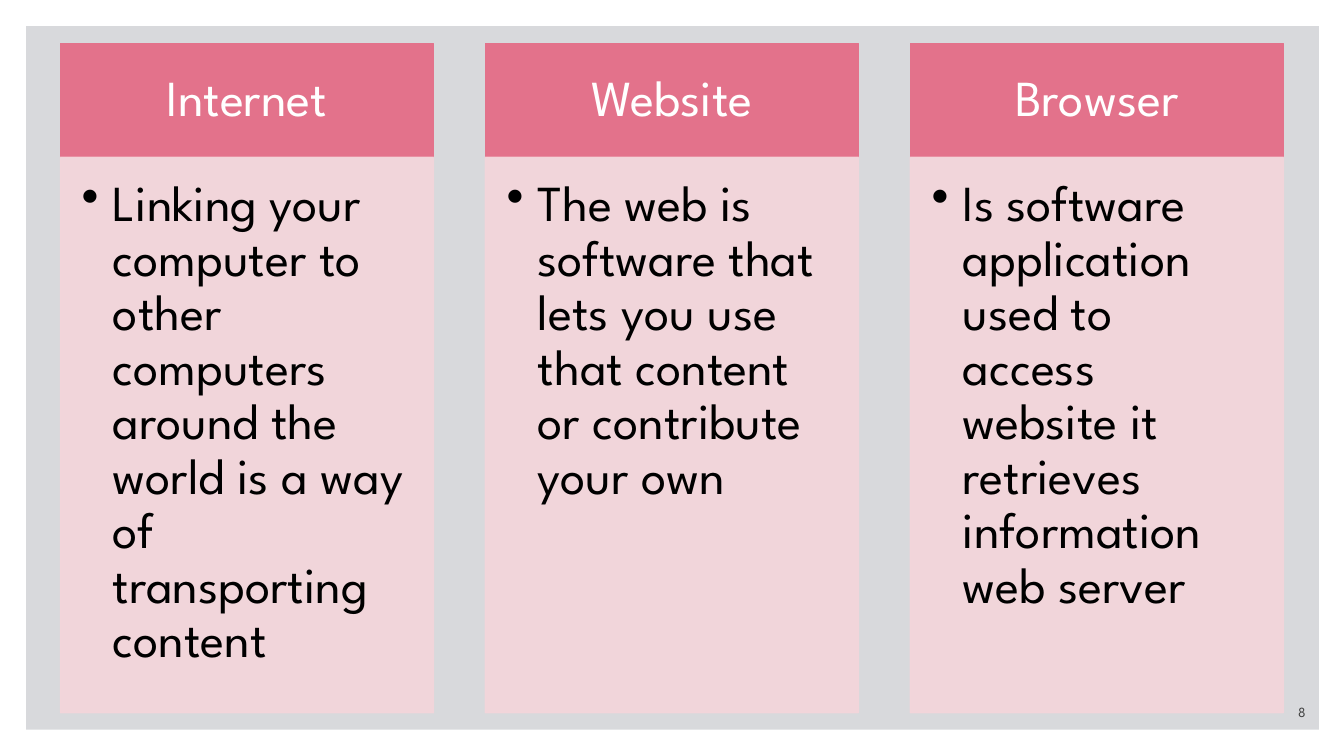
from lxml import etree
from pptx import Presentation
from pptx.dml.color import RGBColor
from pptx.enum import shapes, text
from pptx.oxml.ns import qn
from pptx.util import Inches, Pt

WHITE = RGBColor(0xFF, 0xFF, 0xFF)
BLACK = RGBColor(0, 0, 0)
GREY = RGBColor(0xD8, 0xD9, 0xDC)
DARK_GREY = RGBColor(0x40, 0x40, 0x40)
ROSE = RGBColor(0xE3, 0x72, 0x8B)
PALE_ROSE = RGBColor(0xF4, 0xD5, 0xDA)
FONT = "League Spartan"

COLUMNS = [
    ("Internet", "Linking your computer to other computers around the world "
                 "is a way of transporting content"),
    ("Website", "The web is software that lets you use that content or "
                "contribute your own"),
    ("Browser", "Is software application used to access website it retrieves "
                "information web server"),
]
COLUMN_LEFT, COLUMN_TOP, COLUMN_STEP = 0.6, 0.43, 4.215
COLUMN_WIDTH, HEADER_HEIGHT, BODY_HEIGHT = 3.7, 1.13, 5.51


def add_panel(page, left, top, width, height, color, outlined=True, opacity=100):
    panel = page.shapes.add_shape(
        shapes.MSO_SHAPE.RECTANGLE,
        Inches(left), Inches(top), Inches(width), Inches(height))
    panel.shadow.inherit = False
    panel.fill.solid()
    panel.fill.fore_color.rgb = color
    if outlined:
        panel.line.color.rgb = color
        panel.line.width = Pt(1)
    else:
        panel.line.fill.background()
    if opacity < 100:
        for tone in panel._element.spPr.iter(qn("a:srgbClr")):
            etree.SubElement(tone, qn("a:alpha"), val=str(opacity * 1000))
    return panel


def write(box, words, size=36, color=BLACK, align=text.PP_ALIGN.LEFT,
          anchor=text.MSO_ANCHOR.TOP, insets=(0.1, 0.05, 0.1, 0.05), spacing=1.0):
    """Put one paragraph in the box and return it; insets run left, top, right, bottom."""
    frame = box.text_frame
    frame.word_wrap = True
    frame.vertical_anchor = anchor
    (frame.margin_left, frame.margin_top,
     frame.margin_right, frame.margin_bottom) = map(Inches, insets)
    para = frame.paragraphs[0]
    para.alignment = align
    para.line_spacing = spacing
    span = para.add_run()
    span.text = words
    span.font.name = FONT
    span.font.size = Pt(size)
    span.font.color.rgb = color
    return para


def add_bullet(para, indent):
    para.level = 1
    properties = para._p.get_or_add_pPr()
    properties.set("marL", str(Inches(indent)))
    properties.set("indent", str(Inches(-indent)))
    etree.SubElement(properties, qn("a:buChar"), char="•")


def add_column(page, left, top, title, body):
    header = add_panel(page, left, top, COLUMN_WIDTH, HEADER_HEIGHT, ROSE)
    write(header, title, color=WHITE, align=text.PP_ALIGN.CENTER,
          anchor=text.MSO_ANCHOR.MIDDLE, insets=(0.28, 0.16, 0.28, 0.16), spacing=0.9)
    panel = add_panel(page, left, top + HEADER_HEIGHT, COLUMN_WIDTH, BODY_HEIGHT,
                      PALE_ROSE, opacity=90)
    para = write(panel, body, insets=(0.21, 0.21, 0.28, 0.32), spacing=0.9)
    add_bullet(para, 0.31)


def add_page_number(page, left, top, width, height, number):
    box = page.shapes.add_textbox(
        Inches(left), Inches(top), Inches(width), Inches(height))
    write(box, number, size=10, color=DARK_GREY, align=text.PP_ALIGN.RIGHT,
          anchor=text.MSO_ANCHOR.BOTTOM)


def main():
    deck = Presentation()
    deck.slide_width, deck.slide_height = Inches(13.33), Inches(7.5)
    page = deck.slides.add_slide(deck.slide_layouts[6])
    add_panel(page, 0.26, 0.26, 12.82, 6.98, GREY, outlined=False)
    for index, (title, body) in enumerate(COLUMNS):
        add_column(page, COLUMN_LEFT + index * COLUMN_STEP, COLUMN_TOP, title, body)
    add_page_number(page, 11.45, 6.9, 1.6, 0.3, "8")
    deck.save("out.pptx")


if __name__ == "__main__":
    main()
